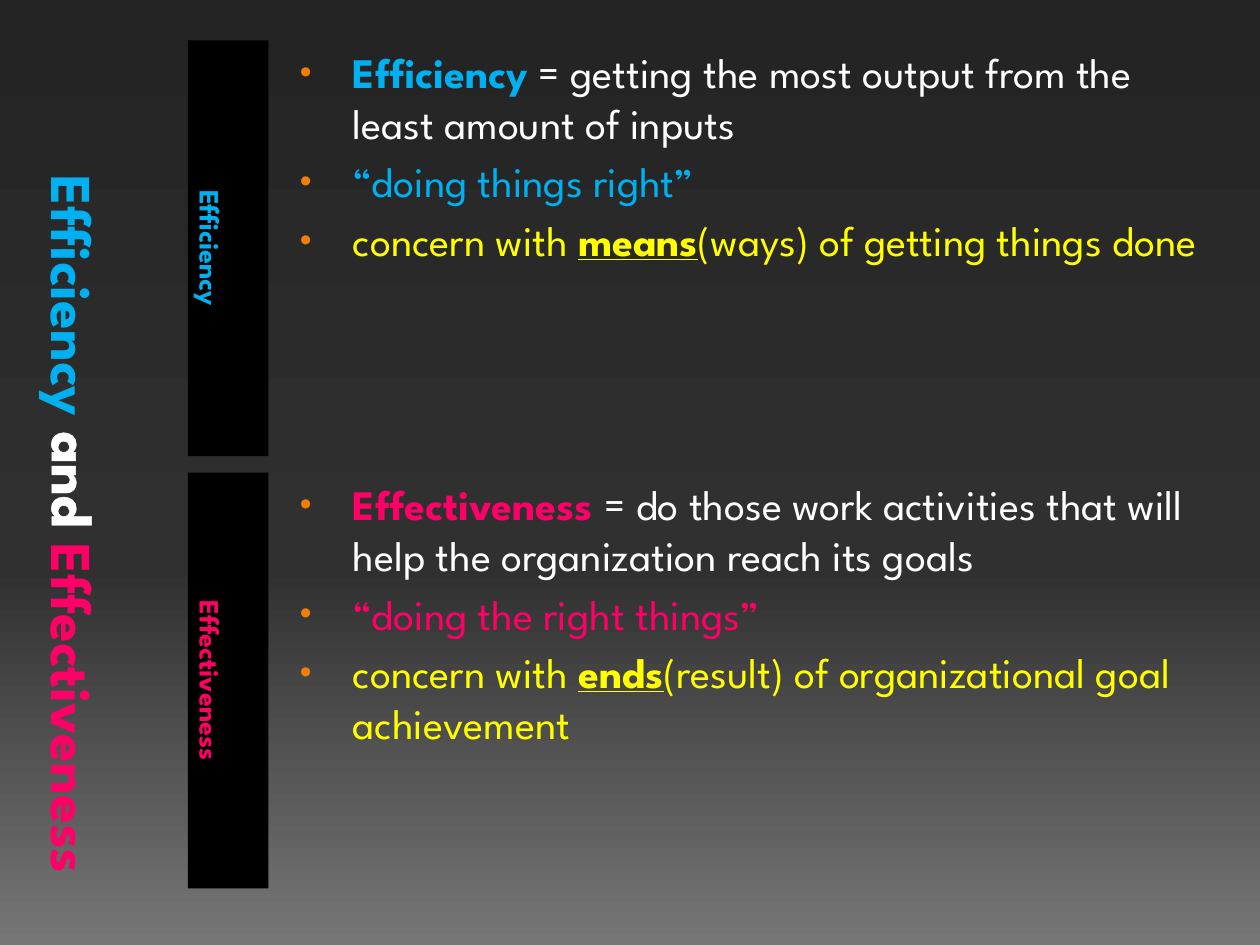
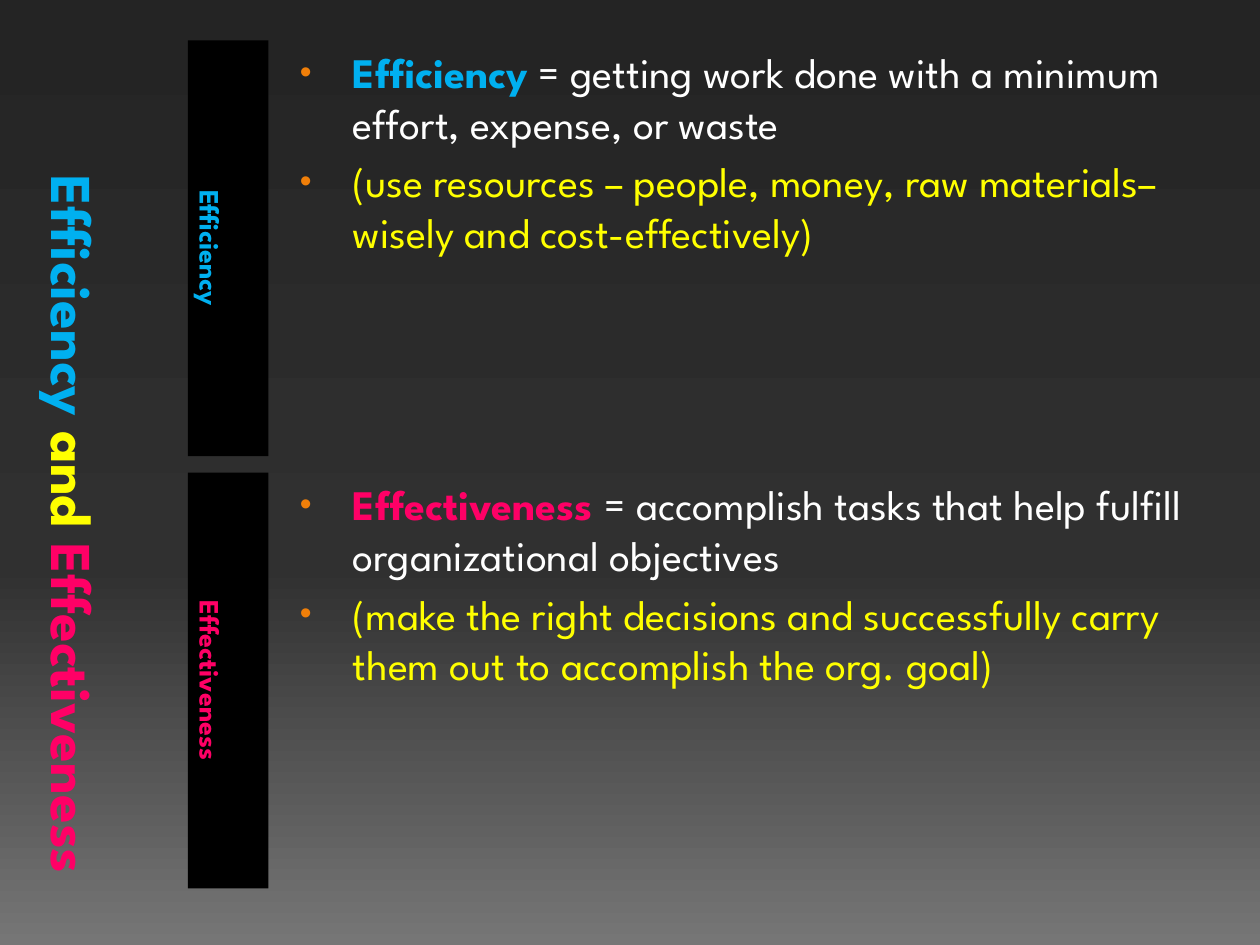
from copy import deepcopy

from lxml import etree
from pptx import Presentation
from pptx.dml.color import RGBColor
from pptx.enum import text as t
from pptx.oxml.ns import qn
from pptx.util import Inches, Pt

FONT = "League Spartan"
BLUE, PINK, YELLOW, WHITE = "00B0F0", "FF0066", "FFFF00", "FFFFFF"
BLACK, ORANGE = "000000", "F07F09"
BACKGROUND = [(0, "242424"), (0.6, "303030"), (1, "767676")]
COMPARISON = 4

TITLE_BOX = (0.27, 0.32, 1.17, 6.73)
ROW_TOP, ROW_HEIGHT, ROW_GAP = 0.32, 3.3, 0.13
LABEL_LEFT, LABEL_WIDTH = 1.49, 0.64
LIST_LEFT, LIST_WIDTH = 2.21, 7.5
TERMS = [("Efficiency", BLUE), ("Effectiveness", PINK)]


def rgb(value):
    return RGBColor.from_string(value)


def child(parent, tag, **attrs):
    return etree.SubElement(parent, qn(tag), attrs)


def add_text(p, words, size=24, color=WHITE, bold=False, underline=False):
    r = p.add_run()
    r.text = words
    f = r.font
    f.name, f.size, f.bold, f.underline = FONT, Pt(size), bold, underline
    f.color.rgb = rgb(color)
    return r


def place(sp, left, top, width, height):
    sp.left, sp.top = Inches(left), Inches(top)
    sp.width, sp.height = Inches(width), Inches(height)
    tf = sp.text_frame
    tf.word_wrap, tf.auto_size = True, t.MSO_AUTO_SIZE.NONE
    tf.margin_top = tf.margin_bottom = Inches(0.05)
    return tf


def place_turned(sp, left, top, width, height):
    """Fill the upright box with a quarter-turned shape, its text along the left edge."""
    shift = (width - height) / 2
    tf = place(sp, left + shift, top - shift, height, width)
    sp.rotation = 90
    tf.margin_left = tf.margin_right = Inches(0.05)
    tf.vertical_anchor = t.MSO_ANCHOR.BOTTOM
    p = tf.paragraphs[0]
    p.alignment = t.PP_ALIGN.CENTER
    return p


def set_indent(p, left, first=0):
    pPr = p._p.get_or_add_pPr()
    pPr.set("marL", str(Inches(left)))
    pPr.set("indent", str(Inches(first)))
    return pPr


def set_background(master):
    fill = master.background.fill
    fill.gradient()
    fill.gradient_angle = 270
    stops = master.element.find(".//" + qn("a:gsLst"))
    stops.append(deepcopy(stops[-1]))
    for stop, (position, color) in zip(fill.gradient_stops, BACKGROUND):
        stop.position = position
        stop.color.rgb = rgb(color)


def fill_title(sp, and_color):
    p = place_turned(sp, *TITLE_BOX)
    set_indent(p, 0.96)
    (first, first_color), (second, second_color) = TERMS
    for words, color in [(first + " ", first_color), ("and ", and_color),
                         (second, second_color)]:
        rPr = add_text(p, words, size=33, color=color, bold=True).font._element
        ln = child(rPr, "a:ln", w=str(Pt(0.5)))
        child(child(ln, "a:solidFill"), "a:srgbClr", val=WHITE)
        rPr.insert(0, ln)


def fill_label(sp, top, term, color):
    p = place_turned(sp, LABEL_LEFT, top, LABEL_WIDTH, ROW_HEIGHT)
    sp.fill.solid()
    sp.fill.fore_color.rgb = rgb(BLACK)
    add_text(p, term, size=16, color=color, bold=True)


def fill_list(sp, top, bullets):
    tf = place(sp, LIST_LEFT, top, LIST_WIDTH, ROW_HEIGHT)
    for i, runs in enumerate(bullets):
        p = tf.add_paragraph() if i else tf.paragraphs[0]
        pPr = set_indent(p, 0.49, -0.42)
        child(child(pPr, "a:buClr"), "a:srgbClr", val=ORANGE)
        child(pPr, "a:buSzPct", val="80000")
        child(pPr, "a:buChar", char="•")
        for words, style in runs:
            add_text(p, words, **style)


def add_comparison(prs, and_color, rows):
    """Add a slide with one labelled row per term: its definition, then more bullets."""
    s = prs.slides.add_slide(prs.slide_layouts[COMPARISON])
    title, *parts = s.placeholders
    fill_title(title, and_color)
    for i, ((term, color), (definition, *more)) in enumerate(zip(TERMS, rows)):
        label, body = parts[2 * i:2 * i + 2]
        top = ROW_TOP + i * (ROW_HEIGHT + ROW_GAP)
        fill_label(label, top, term, color)
        heading = [(term + " ", dict(color=color, bold=True)),
                   ("= " + definition, dict(color=WHITE))]
        fill_list(body, top, [heading, *more])


def plain(words, color=YELLOW):
    return [(words, dict(color=color))]


def concern(key, rest):
    return [("concern with ", dict(color=YELLOW)),
            (key, dict(color=YELLOW, bold=True, underline=True)),
            (rest, dict(color=YELLOW))]


def main():
    prs = Presentation()
    prs.slide_width, prs.slide_height = Inches(10), Inches(7.5)
    set_background(prs.slide_master)
    add_comparison(prs, WHITE, [
        ("getting the most output from the least amount of inputs",
         plain("“doing things right”", BLUE),
         concern("means", "(ways) of getting things done")),
        ("do those work activities that will help the organization reach its goals",
         plain("“doing the right things”", PINK),
         concern("ends", "(result) of organizational goal achievement")),
    ])
    add_comparison(prs, YELLOW, [
        ("getting work done with a minimum effort, expense, or waste",
         plain("(use resources – people, money, raw materials– wisely and "
               "cost-effectively)")),
        ("accomplish tasks that help fulfill organizational objectives",
         plain("(make the right decisions and successfully carry them out to "
               "accomplish the org. goal)")),
    ])
    prs.save("out.pptx")


if __name__ == "__main__":
    main()
